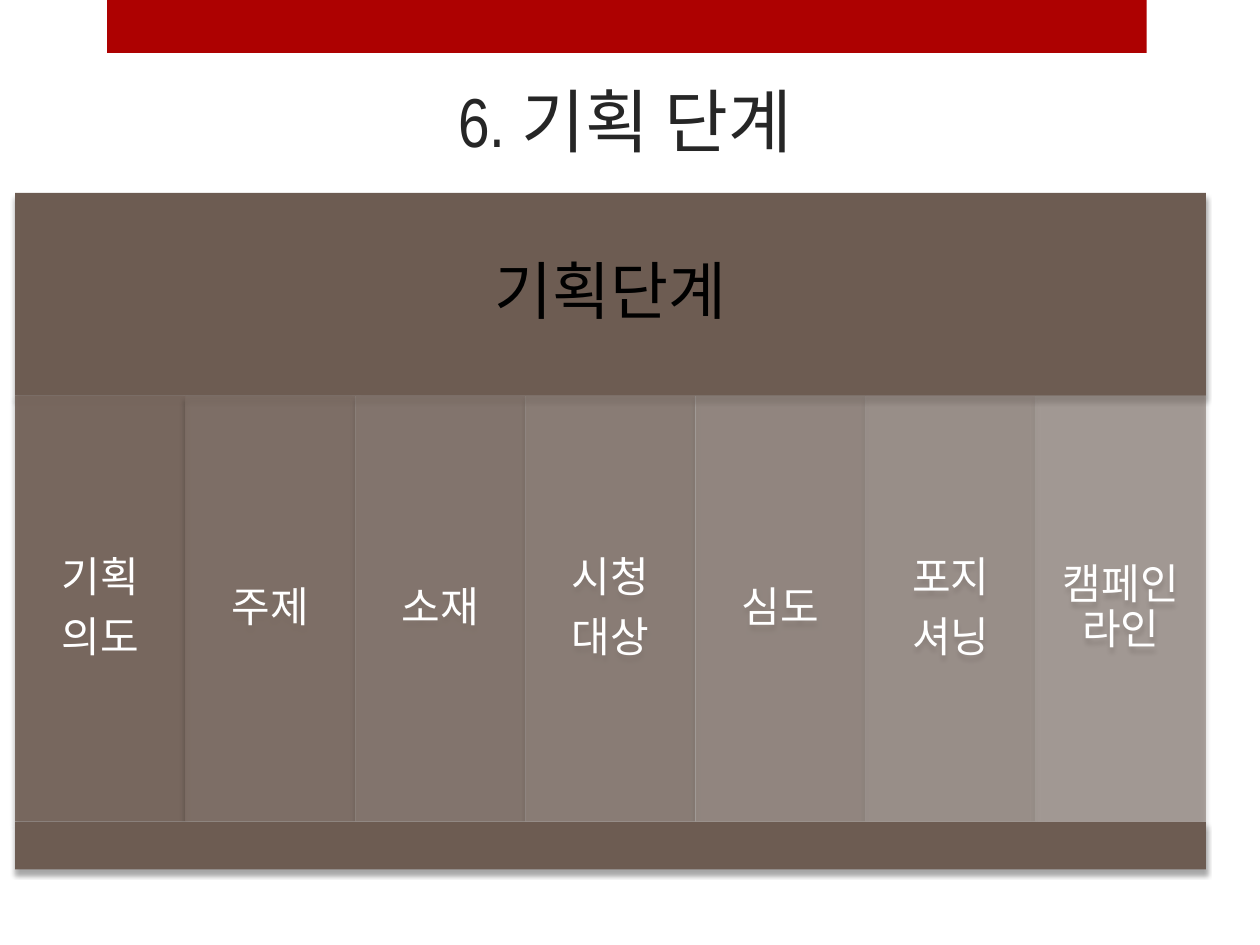
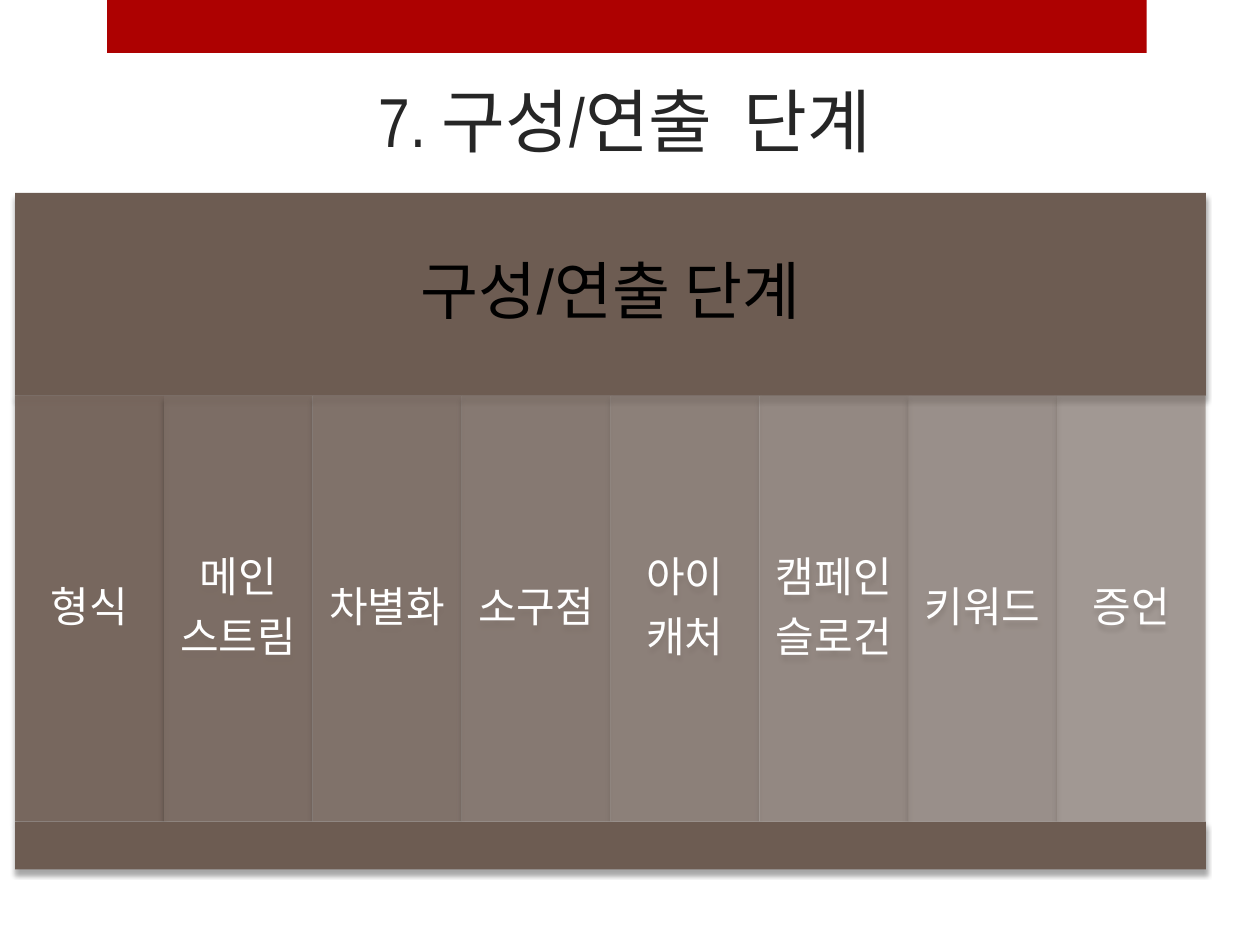
from lxml.etree import SubElement
from pptx import Presentation
from pptx.dml.color import RGBColor
from pptx.enum.shapes import MSO_SHAPE
from pptx.enum.text import MSO_ANCHOR, MSO_AUTO_SIZE, PP_ALIGN
from pptx.oxml.ns import qn
from pptx.util import Inches, Pt

COLORS = {
    "band": "AD0101",
    "title": "262626",
    "frame": "6D5C52",
    "column": "726056",
    "heading": "000000",
    "label": "FFFFFF",
}
WIDTH, HEIGHT = 10, 7.5
BOARD_LEFT, BOARD_WIDTH = 0.12, 9.45
HEADING_TOP, COLUMNS_TOP, BASE_TOP, BASE_BOTTOM = 1.53, 3.14, 6.52, 6.9
FIRST_OPACITY, LAST_OPACITY = 90, 50

SLIDES = [
    ("6. 기획 단계", "기획단계",
     ["기획\n의도", "주제", "소재", "시청\n대상", "심도", "포지\n셔닝", "캠페인라인"]),
    ("7. 구성/연출  단계", "구성/연출 단계",
     ["형식", "메인\n스트림", "차별화", "소구점", "아이\n캐처", "캠페인\n슬로건",
      "키워드", "증언"]),
]


def color(name):
    return RGBColor.from_string(COLORS[name])


def add_rect(shapes, left, top, width, height, fill):
    sp = shapes.add_shape(MSO_SHAPE.RECTANGLE, Inches(left), Inches(top),
                          Inches(width), Inches(height))
    sp.fill.solid()
    sp.fill.fore_color.rgb = color(fill)
    sp.line.fill.background()
    sp.shadow.inherit = False
    return sp


def add_alpha(clr, percent):
    SubElement(clr, qn("a:alpha"), val=str(round(percent * 1000)))


def add_shadow(sp):
    effects = sp._element.spPr.find(qn("a:effectLst"))
    shadow = SubElement(effects, qn("a:outerShdw"), blurRad=str(Pt(3)),
                        dist=str(Pt(3)), dir="5400000", rotWithShape="0")
    add_alpha(SubElement(shadow, qn("a:srgbClr"), val="000000"), 35)


def set_opacity(sp, percent):
    add_alpha(sp._element.spPr.find(qn("a:solidFill"))[0], percent)


def add_run(p, text, font, size, fill):
    p.alignment = PP_ALIGN.CENTER
    r = p.add_run()
    r.text = text
    r.font.name = font
    r.font.size = Pt(size)
    r.font.color.rgb = color(fill)


def write_text(sp, text, size, fill, inset):
    tf = sp.text_frame
    tf.word_wrap = True
    tf.vertical_anchor = MSO_ANCHOR.MIDDLE
    tf.margin_left = tf.margin_right = Inches(inset)
    tf.margin_top = tf.margin_bottom = Inches(inset)
    for i, line in enumerate(text.split("\n")):
        p = tf.add_paragraph() if i else tf.paragraphs[0]
        p.line_spacing = 0.9
        p.space_after = Pt(0.35 * size)
        add_run(p, line, "Arial", size, fill)


def add_title_slide(prs, title):
    s = prs.slides.add_slide(prs.slide_layouts[5])
    add_rect(s.shapes, 0.085 * WIDTH, 0, 0.825 * WIDTH, 0.056 * HEIGHT, "band")
    sp = s.shapes.title
    sp.left, sp.top = Inches(0.83), Inches(0.52)
    sp.width, sp.height = Inches(8.26), Inches(0.81)
    tf = sp.text_frame
    tf.auto_size = MSO_AUTO_SIZE.NONE
    tf.vertical_anchor = MSO_ANCHOR.BOTTOM
    add_run(tf.paragraphs[0], title, "Arial Narrow", 39.6, "title")
    return s


def add_board_row(shapes, top, bottom):
    sp = add_rect(shapes, BOARD_LEFT, top, BOARD_WIDTH, bottom - top, "frame")
    add_shadow(sp)
    return sp


def add_stage_columns(shapes, labels):
    width = BOARD_WIDTH / len(labels)
    fade = (FIRST_OPACITY - LAST_OPACITY) / (len(labels) - 1)
    for i, label in enumerate(labels):
        sp = add_rect(shapes, BOARD_LEFT + i * width, COLUMNS_TOP,
                      width, BASE_TOP - COLUMNS_TOP, "column")
        set_opacity(sp, FIRST_OPACITY - i * fade)
        add_shadow(sp)
        write_text(sp, label, 24, "label", 0.1)


def add_stage_board(s, heading, labels):
    shapes = s.shapes.add_group_shape().shapes
    sp = add_board_row(shapes, HEADING_TOP, COLUMNS_TOP)
    write_text(sp, heading, 36, "heading", 0.15)
    add_stage_columns(shapes, labels)
    add_board_row(shapes, BASE_TOP, BASE_BOTTOM)


def main():
    prs = Presentation()
    prs.slide_width, prs.slide_height = Inches(WIDTH), Inches(HEIGHT)
    for title, heading, labels in SLIDES:
        s = add_title_slide(prs, title)
        add_stage_board(s, heading, labels)
    prs.save("out.pptx")


if __name__ == "__main__":
    main()
